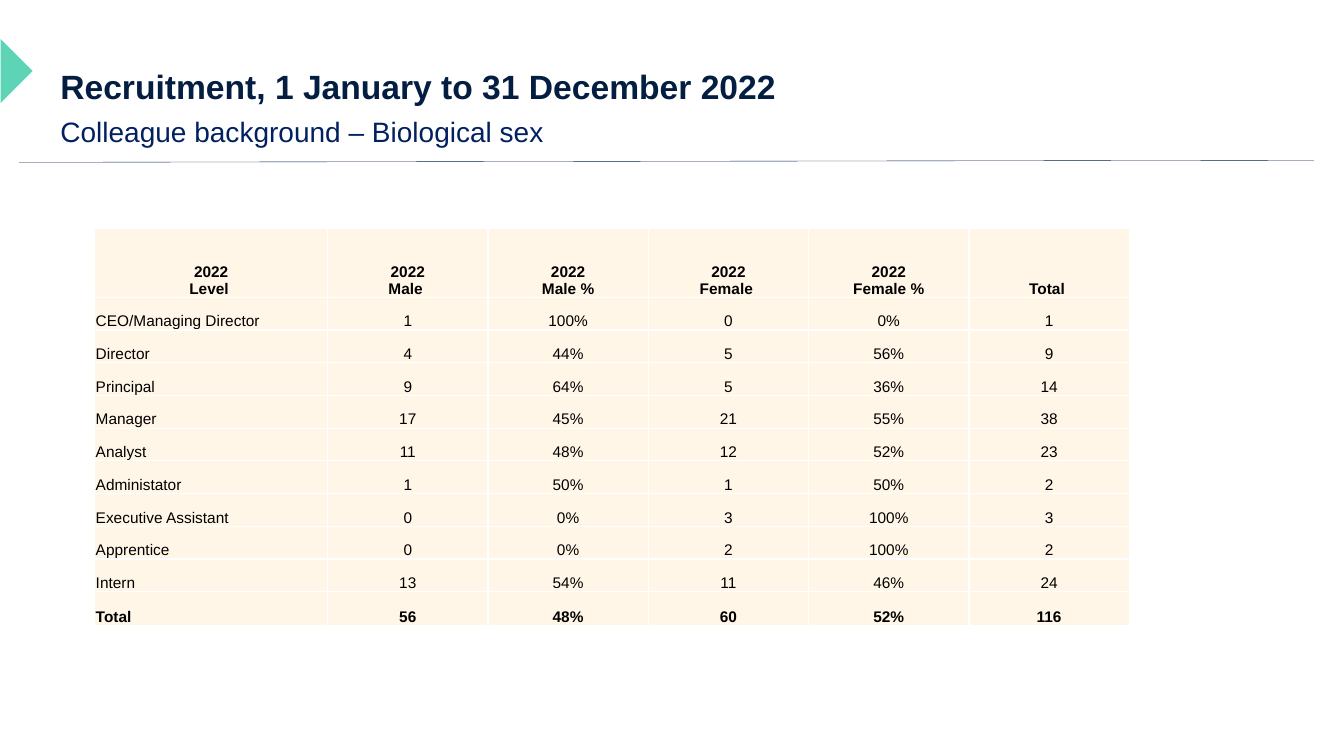
import lxml.etree
import pptx
import pptx.dml.color
import pptx.enum.shapes
import pptx.enum.text
import pptx.oxml
import pptx.oxml.ns
import pptx.util

COLORS = {"navy": "041E42", "blue": "002060", "mint": "5CD4B5",
          "cream": "FFF6E7", "black": "000000", "white": "FFFFFF"}
RGB = {name: pptx.dml.color.RGBColor.from_string(value) for name, value in COLORS.items()}
ALIGN = pptx.enum.text.PP_ALIGN
ANCHOR = pptx.enum.text.MSO_ANCHOR

presentation = pptx.Presentation()
presentation.slide_width = pptx.util.Inches(13.33)
presentation.slide_height = pptx.util.Inches(7.5)
slide = presentation.slides.add_slide(presentation.slide_layouts[6])


def place(left, top, right, bottom):
    """Turn percentages of the slide's width and height into lengths."""
    width, height = presentation.slide_width, presentation.slide_height
    return [round(share * side / 100) for share, side in
            zip((left, top, right, bottom), (width, height, width, height))]


def format_font(font, color, **values):
    font.name = "Arial"
    font.color.rgb = RGB[color]
    for name, value in values.items():
        setattr(font, name, value)


# Corner marker and header rule
marker = slide.shapes.add_shape(pptx.enum.shapes.MSO_SHAPE.RIGHT_TRIANGLE,
                                *place(-1.65, 6.4, 3.38, 6))
marker.rotation = 225
marker.shadow.inherit = False
marker.fill.solid()
marker.fill.fore_color.rgb = RGB["mint"]
marker.line.fill.background()

rule = slide.shapes.add_connector(pptx.enum.shapes.MSO_CONNECTOR.STRAIGHT,
                                  *place(1.43, 21.47, 97.75, 21.2))
rule.line.color.rgb = RGB["navy"]
rule.line.width = pptx.util.Pt(0.25)
lxml.etree.SubElement(rule.line._get_or_add_ln().getparent(),
                      pptx.oxml.ns.qn("a:effectLst"))

# Title and subtitle
headings = [
    ("Recruitment, 1 January to 31 December 2022", (3.75, 7.47, 72.39, 8.4),
     ANCHOR.MIDDLE, "navy", {"size": pptx.util.Pt(24), "bold": True}),
    ("Colleague background – Biological sex", (3.75, 14.93, 66.77, 5.33),
     ANCHOR.TOP, "blue", {"size": pptx.util.Pt(20)}),
]
for text, area, anchor, color, font_values in headings:
    text_frame = slide.shapes.add_textbox(*place(*area)).text_frame
    text_frame.word_wrap = True
    text_frame.vertical_anchor = anchor
    paragraph = text_frame.paragraphs[0]
    paragraph.line_spacing = 0.9
    run = paragraph.add_run()
    run.text = text
    format_font(run.font, color, **font_values)

# Recruitment table
records = [
    (("2022", "Level "), ("2022", "Male "), ("2022", "Male %"),
     ("2022", "Female "), ("2022", "Female %"), ("Total ",)),
    ("CEO/Managing Director", "1", "100%", "0", "0%", "1"),
    ("Director", "4", "44%", "5", "56%", "9"),
    ("Principal", "9", "64%", "5", "36%", "14"),
    ("Manager", "17", "45%", "21", "55%", "38"),
    ("Analyst", "11", "48%", "12", "52%", "23"),
    ("Administator", "1", "50%", "1", "50%", "2"),
    ("Executive Assistant", "0", "0%", "3", "100%", "3"),
    ("Apprentice", "0", "0%", "2", "100%", "2"),
    ("Intern", "13", "54%", "11", "46%", "24"),
    ("Total", "56", "48%", "60", "52%", "116"),
]
column_shares = [17.33] + [11.93] * 5
row_shares = [9.07] + [4.33] * 9 + [4.53]
last_row = len(records) - 1
table = slide.shapes.add_table(
    len(records), len(column_shares),
    *place(7.05, 30.27, sum(column_shares), sum(row_shares))).table
table.first_row = table.horz_banding = False
for column, share in zip(table.columns, column_shares):
    column.width = place(share, 0, 0, 0)[0]
for row, share in zip(table.rows, row_shares):
    row.height = place(0, share, 0, 0)[1]

inset = pptx.util.Inches(0.01)
cell_format = {"margin_left": inset, "margin_right": inset, "margin_top": inset,
               "margin_bottom": 0, "vertical_anchor": ANCHOR.BOTTOM}
for row_index, record in enumerate(records):
    for column_index, content in enumerate(record):
        cell = table.cell(row_index, column_index)
        for name, value in cell_format.items():
            setattr(cell, name, value)
        properties = cell._tc.get_or_add_tcPr()
        for edge in ("lnL", "lnR", "lnT", "lnB"):
            properties.append(pptx.oxml.parse_xml(
                f'<a:{edge} {pptx.oxml.ns.nsdecls("a")} w="{pptx.util.Pt(1)}"><a:solidFill>'
                f'<a:srgbClr val="{COLORS["white"]}"/></a:solidFill></a:{edge}>'))
        cell.fill.solid()
        cell.fill.fore_color.rgb = RGB["cream"]

        is_header = row_index == 0
        paragraph = cell.text_frame.paragraphs[0]
        paragraph.alignment = ALIGN.CENTER if is_header or column_index else ALIGN.LEFT
        for line_index, line in enumerate(content if is_header else [content]):
            if line_index:
                paragraph.add_line_break()
            run = paragraph.add_run()
            run.text = line
            format_font(run.font, "black", size=pptx.util.Pt(11),
                        bold=row_index in (0, last_row))

presentation.save("out.pptx")
